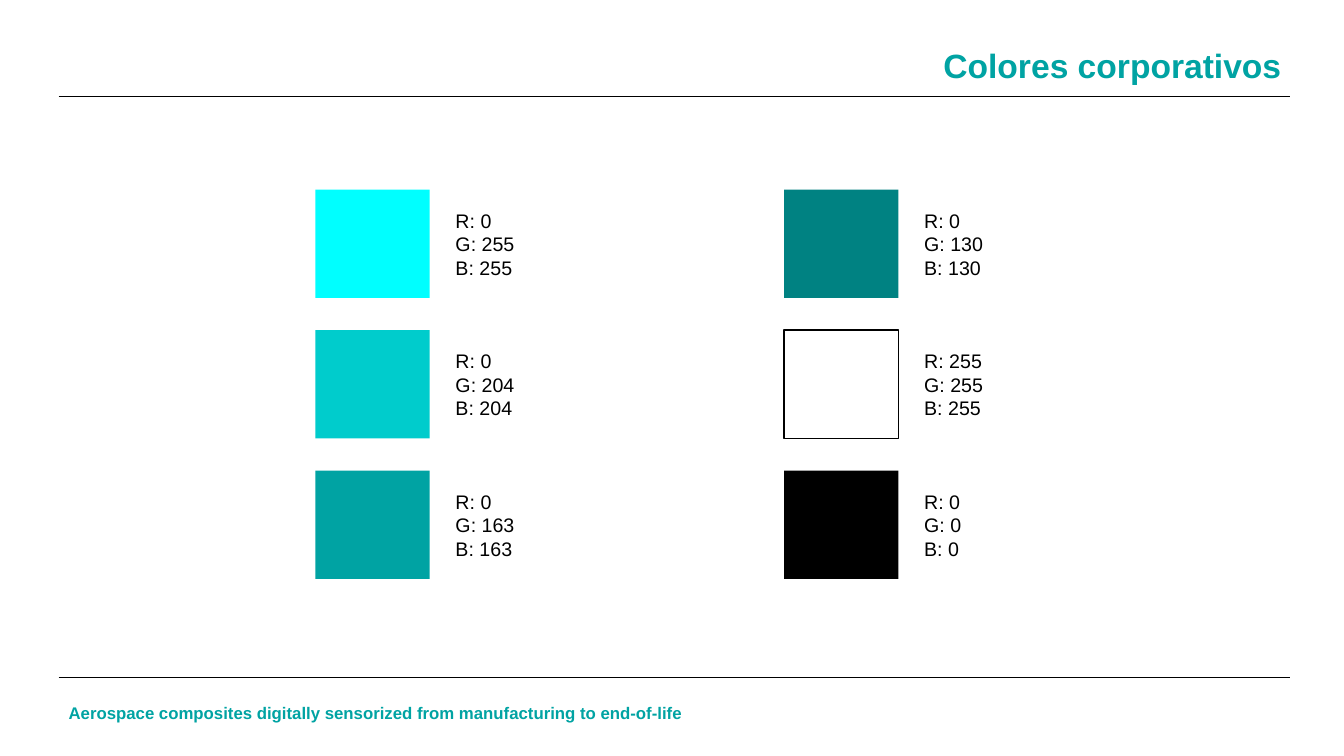
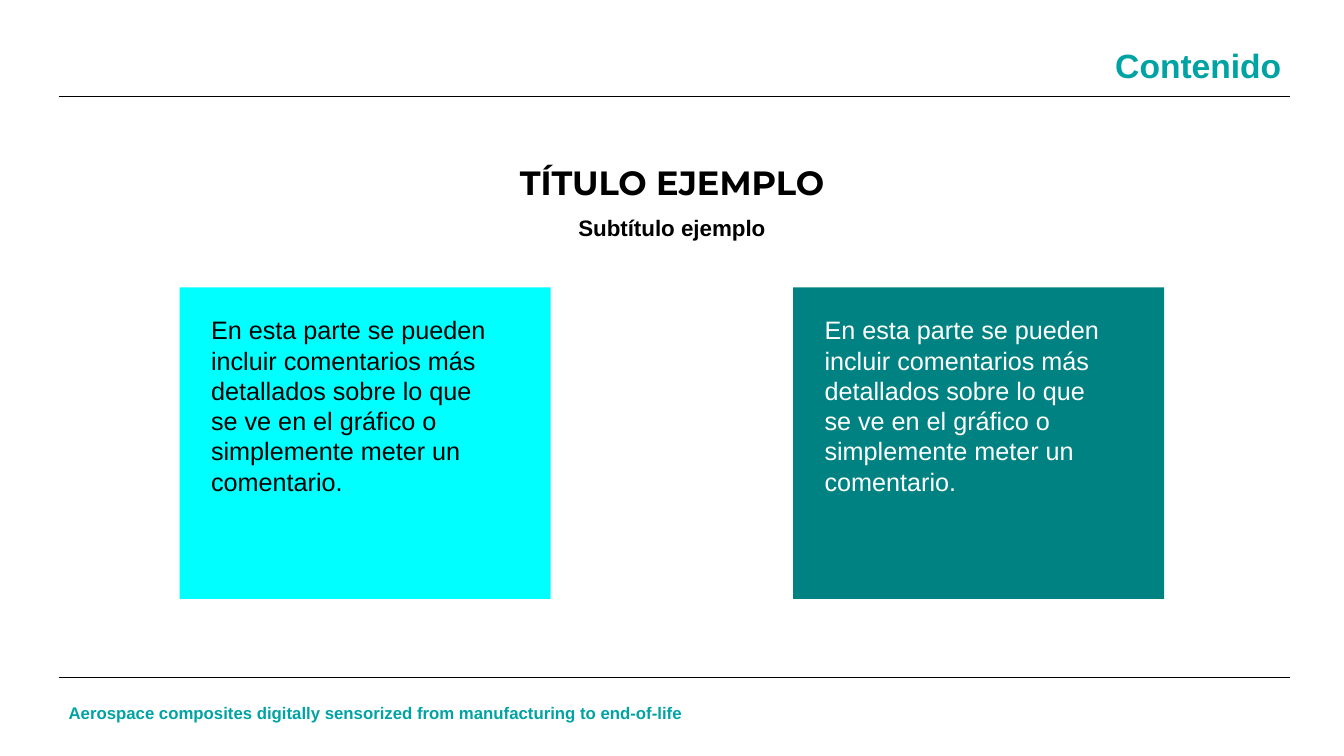
import dataclasses

import pptx
import pptx.dml.color
import pptx.enum.shapes
import pptx.enum.text
import pptx.oxml.ns
import pptx.util
from lxml import etree

Cm = pptx.util.Cm
Pt = pptx.util.Pt
ALIGN = pptx.enum.text.PP_ALIGN


@dataclasses.dataclass(frozen=True)
class Theme:
    # Palette
    cyan: str = "00FFFF"
    turquoise: str = "00CCCC"
    teal: str = "00A3A3"
    deep_teal: str = "008282"
    white: str = "FFFFFF"
    black: str = "000000"
    # Fonts and type sizes
    body_font: str = "Arial"
    display_font: str = "Montserrat"
    title_size: int = 24
    text_size: int = 18
    subtitle_size: int = 16
    label_size: int = 14
    footer_size: int = 12


THEME = Theme()
SLIDE_WIDTH, SLIDE_HEIGHT = 33.87, 19.05
FOOTER = "Aerospace composites digitally sensorized from manufacturing to end-of-life"
COMMENT = ("En esta parte se pueden incluir comentarios más detallados sobre lo que "
           "se ve en el gráfico o simplemente meter un comentario.")


def rgb(color):
    return pptx.dml.color.RGBColor.from_string(color)


def write(frame, lines, size, color, bold=False, align=ALIGN.LEFT, font=THEME.body_font):
    """Fill a text frame with one paragraph per line, all in one style."""
    frame.word_wrap = True
    frame.vertical_anchor = pptx.enum.text.MSO_ANCHOR.TOP
    frame.text = "\n".join(lines)
    for paragraph in frame.paragraphs:
        paragraph.alignment = align
        paragraph.font.name = font
        paragraph.font.size = Pt(size)
        paragraph.font.bold = bold
        paragraph.font.color.rgb = rgb(color)


def add_text(slide, left, top, width, height, lines, size, color, **style):
    box = slide.shapes.add_textbox(Cm(left), Cm(top), Cm(width), Cm(height))
    write(box.text_frame, lines, size, color, **style)


def add_block(slide, left, top, width, height, fill, outline=None):
    block = slide.shapes.add_shape(pptx.enum.shapes.MSO_SHAPE.RECTANGLE,
                                   Cm(left), Cm(top), Cm(width), Cm(height))
    block.shadow.inherit = False
    block.fill.solid()
    block.fill.fore_color.rgb = rgb(fill)
    if outline:
        block.line.color.rgb = rgb(outline)
        block.line.width = Pt(1)
    else:
        block.line.fill.background()
    return block


def add_rule(slide, top):
    rule = slide.shapes.add_connector(pptx.enum.shapes.MSO_CONNECTOR.STRAIGHT,
                                      Cm(1.48), Cm(top), Cm(32.5), Cm(top))
    rule.line.color.rgb = rgb(THEME.black)
    rule.line.width = Pt(0.5)
    etree.SubElement(rule._element.spPr, pptx.oxml.ns.qn("a:effectLst"))


def add_page(deck, title):
    """Start a slide with the shared title, rules and footer."""
    slide = deck.slides.add_slide(deck.slide_layouts[6])
    add_text(slide, 1.48, 17.58, 16.3, 0.77, [FOOTER],
             THEME.footer_size, THEME.teal, bold=True)
    for top in (2.44, 17.07):
        add_rule(slide, top)
    add_text(slide, 23.44, 1, 9.1, 1.28, [title],
             THEME.title_size, THEME.teal, bold=True, align=ALIGN.RIGHT)
    return slide


def add_swatch(slide, left, top, color):
    """Colour sample with its RGB values beside it."""
    outline = THEME.black if color == THEME.white else None
    add_block(slide, left, top, 2.88, 2.73, color, outline)
    values = [f"{channel}: {value}" for channel, value in zip("RGB", rgb(color))]
    add_text(slide, left + 3.28, top + 0.35, 2.85, 2.05, values,
             THEME.label_size, THEME.black)


def add_comment_card(slide, left, fill, text_color):
    card = add_block(slide, left, 7.24, 9.35, 7.85, fill)
    frame = card.text_frame
    frame.margin_left, frame.margin_right = Cm(0.79), Cm(1.5)
    frame.margin_top = Cm(0.69)
    write(frame, [COMMENT], THEME.text_size, text_color)


def build_palette(deck):
    slide = add_page(deck, "Colores corporativos")
    columns = (
        (7.95, (THEME.cyan, THEME.turquoise, THEME.teal)),
        (19.76, (THEME.deep_teal, THEME.white, THEME.black)),
    )
    for left, colors in columns:
        for row, color in enumerate(colors):
            add_swatch(slide, left, 4.78 + 3.54 * row, color)


def build_content(deck):
    slide = add_page(deck, "Contenido")
    # Centred headings
    add_text(slide, 10, 3.96, SLIDE_WIDTH - 20, 1.28, ["TÍTULO EJEMPLO"],
             THEME.title_size, THEME.black, bold=True, align=ALIGN.CENTER,
             font=THEME.display_font)
    add_text(slide, 10, 5.26, SLIDE_WIDTH - 20, 0.94, ["Subtítulo ejemplo"],
             THEME.subtitle_size, THEME.black, bold=True, align=ALIGN.CENTER)
    # Comment cards
    add_comment_card(slide, 4.53, THEME.cyan, THEME.black)
    add_comment_card(slide, 19.99, THEME.deep_teal, THEME.white)


def main():
    deck = pptx.Presentation()
    deck.slide_width, deck.slide_height = Cm(SLIDE_WIDTH), Cm(SLIDE_HEIGHT)
    build_palette(deck)
    build_content(deck)
    deck.save("out.pptx")


if __name__ == "__main__":
    main()
